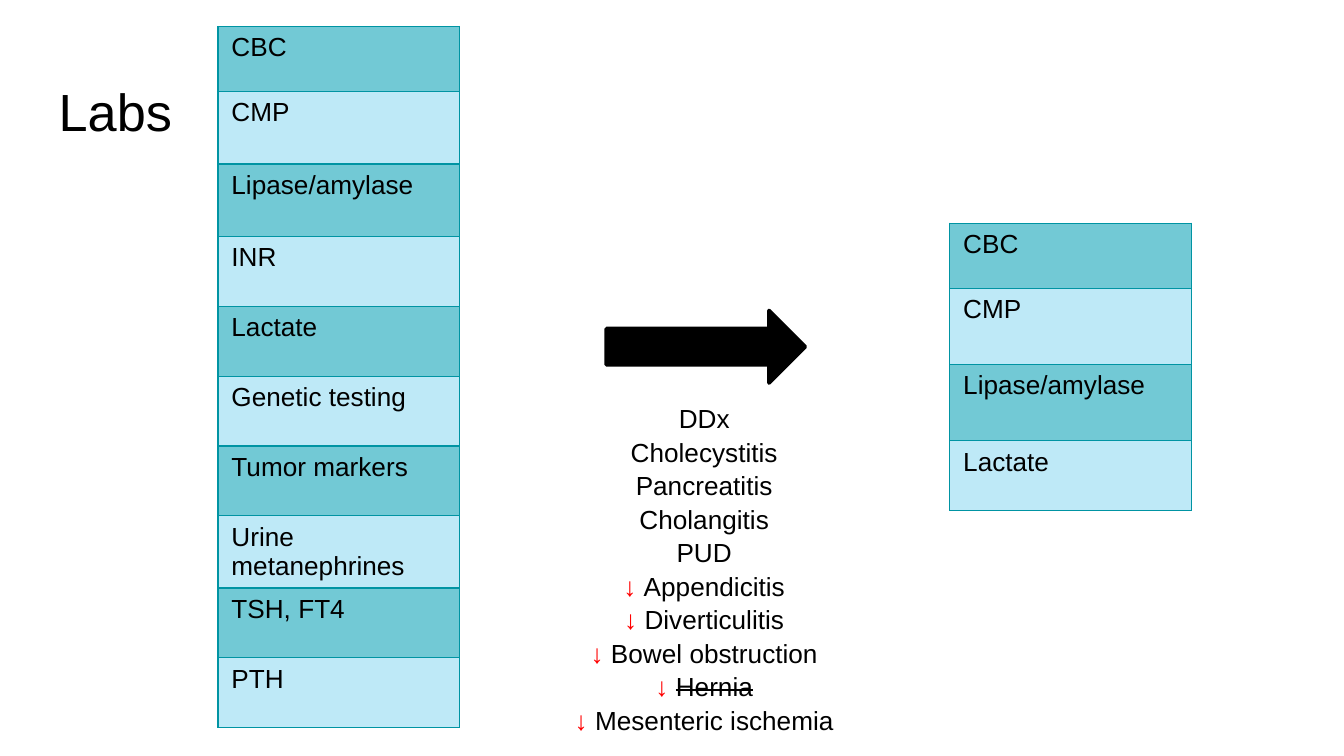
from lxml import etree
from pptx import Presentation
from pptx.dml.color import RGBColor
from pptx.enum.shapes import MSO_SHAPE as Shape
from pptx.enum.text import MSO_ANCHOR as Anchor, PP_ALIGN as Align
from pptx.oxml import parse_xml
from pptx.oxml.ns import nsdecls, qn
from pptx.util import Cm, Pt

BLACK = RGBColor(0, 0, 0)
WHITE = RGBColor(0xFF, 0xFF, 0xFF)
RED = RGBColor(0xFF, 0, 0)
TEAL = RGBColor(0x72, 0xC9, 0xD5)
PALE_BLUE = RGBColor(0xBE, 0xE9, 0xF7)
BORDER = RGBColor(0, 0x94, 0xA3)


def add_text(paragraph, text, size=14, color=BLACK, bold=False, strike=False):
    run = paragraph.add_run()
    run.text = text
    run.font.name = "Arial"
    run.font.size = Pt(size)
    run.font.color.rgb = color
    run.font.bold = bold
    if strike:
        run.font._element.set("strike", "sngStrike")


def add_borders(cell):
    properties = cell._tc.get_or_add_tcPr()
    for position, side in enumerate("LRTB"):
        # Border lines have to stand before the cell's fill
        properties.insert(position, parse_xml(
            f'<a:ln{side} {nsdecls("a")} w="{Pt(0.75)}"><a:solidFill>'
            f'<a:srgbClr val="{BORDER}"/></a:solidFill></a:ln{side}>'))


prs = Presentation()
prs.slide_width, prs.slide_height = Cm(25.4), Cm(14.29)
slide = prs.slides.add_slide(prs.slide_layouts[5])

# Title
title = slide.shapes.title
title.left, title.top, title.width, title.height = Cm(0.86), Cm(1.24), Cm(23.67), Cm(1.6)
heading = title.text_frame
heading.margin_left = heading.margin_right = Cm(0.25)
heading.margin_top = heading.margin_bottom = Cm(0.25)
heading.vertical_anchor = Anchor.TOP
heading.paragraphs[0].alignment = Align.LEFT
add_text(heading.paragraphs[0], "Labs", size=28)

# All labs on the left, the narrowed list on the right: (lab, row height in cm)
all_labs = [
    ("CBC", 1.23), ("CMP", 1.37), ("Lipase/amylase", 1.37), ("INR", 1.32),
    ("Lactate", 1.32), ("Genetic testing", 1.32), ("Tumor markers", 1.32),
    ("Urine metanephrines", 1.35), ("TSH, FT4", 1.32), ("PTH", 1.32),
]
chosen_labs = [("CBC", 1.23), ("CMP", 1.44), ("Lipase/amylase", 1.44), ("Lactate", 1.32)]

for left, top, labs in [(4.12, 0.5, all_labs), (17.95, 4.22, chosen_labs)]:
    total = sum(height for _, height in labs)
    table = slide.shapes.add_table(len(labs), 1, Cm(left), Cm(top), Cm(4.57), Cm(total)).table
    table.first_row = False
    for row, (lab, height) in enumerate(labs):
        table.rows[row].height = Cm(height)
        cell = table.cell(row, 0)
        cell.fill.solid()
        cell.fill.fore_color.rgb = PALE_BLUE if row % 2 else TEAL
        add_borders(cell)
        add_text(cell.text_frame.paragraphs[0], lab)

# Arrow from all labs to the chosen ones
arrow = slide.shapes.add_shape(Shape.RIGHT_ARROW, Cm(11.46), Cm(5.87), Cm(3.76), Cm(1.37))
arrow.shadow.inherit = False
arrow.fill.solid()
arrow.fill.fore_color.rgb = BLACK
arrow.line.color.rgb = BLACK
arrow.line.width = Pt(2)
etree.SubElement(arrow.line._get_or_add_ln(), qn("a:round"))

# Differential diagnosis, with the less likely ones marked by a red arrow
likely = ["DDx", "Cholecystitis", "Pancreatitis", "Cholangitis", "PUD"]
less_likely = ["Appendicitis", "Diverticulitis", "Bowel obstruction", "Hernia",
               "Mesenteric ischemia"]
differential = slide.shapes.add_textbox(Cm(10.59), Cm(7.44), Cm(5.44), Cm(6.25))
differential.fill.solid()
differential.fill.fore_color.rgb = WHITE
frame = differential.text_frame
frame.word_wrap = False
for index, diagnosis in enumerate(likely + less_likely):
    line = frame.add_paragraph() if index else frame.paragraphs[0]
    line.alignment = Align.CENTER
    line.line_spacing = 1.07
    if diagnosis in less_likely:
        add_text(line, "↓ ", color=RED, bold=True)
    add_text(line, diagnosis, strike=diagnosis == "Hernia")

prs.save("out.pptx")
